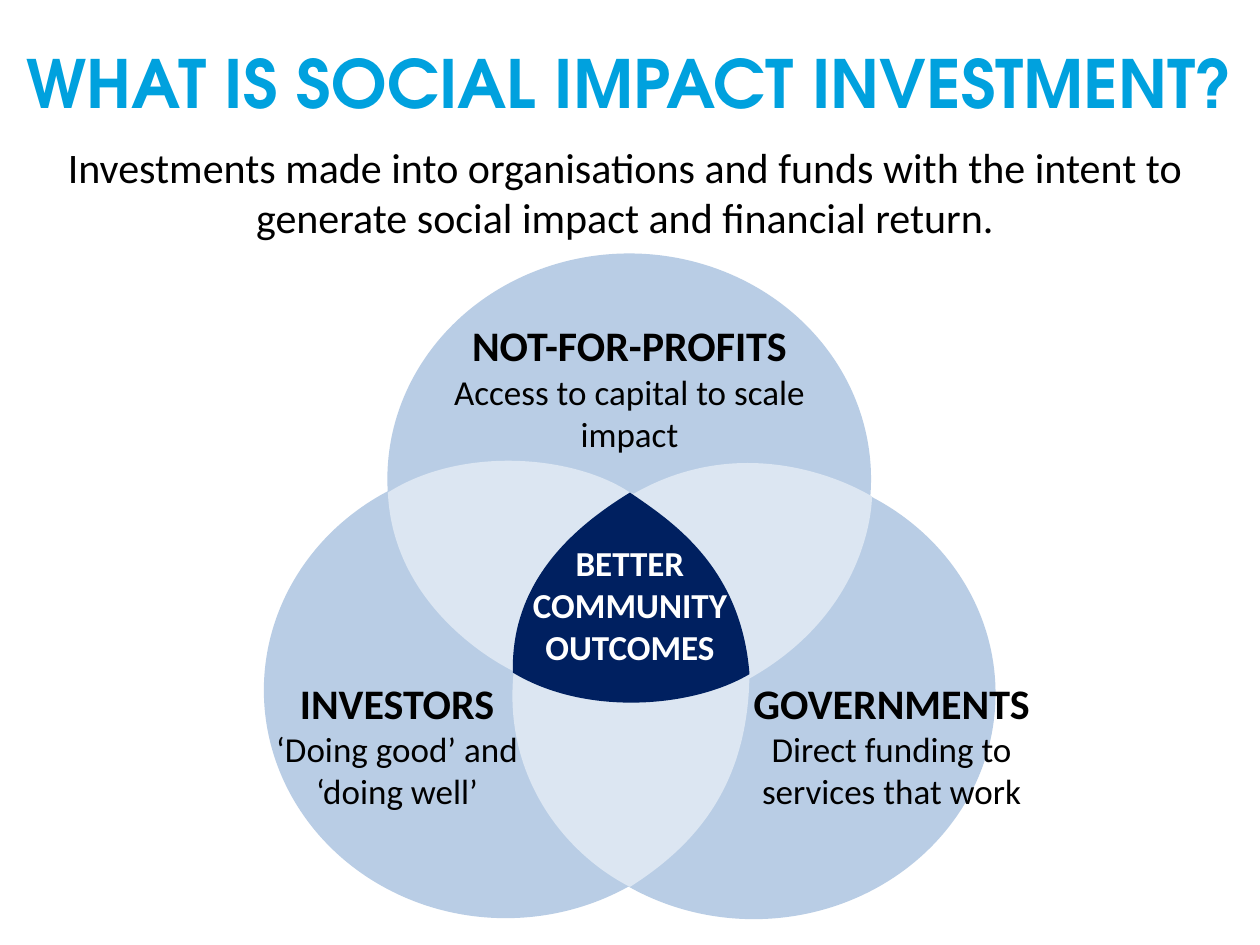
"""Build the social impact investment slide with its three-circle Venn diagram."""
from lxml.etree import SubElement
from pptx import Presentation
from pptx.dml.color import RGBColor
from pptx.enum.shapes import MSO_SHAPE
from pptx.enum.text import MSO_ANCHOR as ANCHOR, PP_ALIGN as ALIGN
from pptx.oxml.ns import qn
from pptx.util import Cm, Pt

COLOURS = {"title": "00A1DE", "text": "000000", "circle": "B9CDE5",
           "overlap": "DCE6F2", "core": "002060", "light": "FFFFFF"}
FORMATS = {
    "title": {"name": "TeX Gyre Adventor", "size": Pt(38), "bold": True},
    "intro": {"name": "Calibri", "size": Pt(24), "bold": False},
    "heading": {"name": "Calibri", "size": Pt(24), "bold": True},
    "detail": {"name": "Calibri", "size": Pt(20), "bold": False},
    "core": {"name": "Calibri", "size": Pt(20), "bold": True},
}


def write_text(shape, lines, colour, **frame_format):
    frame = shape.text_frame
    frame.word_wrap = True
    for key, value in frame_format.items():
        setattr(frame, key, value)
    for index, (text, style) in enumerate(lines):
        para = frame.add_paragraph() if index else frame.paragraphs[0]
        para.alignment = ALIGN.CENTER
        span = para.add_run()
        span.text = text
        span.font.color.rgb = RGBColor.from_string(COLOURS[colour])
        for key, value in FORMATS[style].items():
            setattr(span.font, key, value)


def add_curved_area(shapes, outline):
    builder = shapes.build_freeform(*map(Cm, outline[0]))
    builder.add_line_segments([tuple(map(Cm, point)) for point in outline[1:]], close=True)
    shape = builder.convert_to_shape()
    lines = list(shape.element.iter(qn("a:lnTo")))
    for first in range(0, len(lines), 3):
        curve = SubElement(lines[first].getparent(), qn("a:cubicBezTo"))
        lines[first].addprevious(curve)
        for line in lines[first:first + 3]:
            curve.append(line[0])
            line.getparent().remove(line)
    return shape


deck = Presentation()
deck.slide_width, deck.slide_height = Cm(25.4), Cm(19.05)
page = deck.slides.add_slide(deck.slide_layouts[6])

title = page.shapes.add_textbox(Cm(0), Cm(0.75), Cm(25.4), Cm(1.8))
write_text(title, [("WHAT IS SOCIAL IMPACT INVESTMENT?", "title")], "title",
           vertical_anchor=ANCHOR.MIDDLE, margin_left=0, margin_right=0)

intro = page.shapes.add_textbox(Cm(0.9), Cm(2.72), Cm(23.4), Cm(2.31))
write_text(intro, [("Investments made into organisations and funds with the intent to "
                    "generate social impact and financial return.", "intro")], "text")

venn = [
    ("circle", (7.81, 5.11, 9.75, 9.09)),
    ("circle", (5.32, 9.32, 9.75, 9.19)),
    ("overlap", [(12.67, 9.91),
                 (13.94, 10.44), (15.44, 12.98), (15.04, 13.56),
                 (14.66, 14.17), (11.53, 14.12), (10.31, 13.51),
                 (9.91, 13.31), (7.92, 12.17), (7.82, 9.93),
                 (9.3, 8.99), (11.53, 9.17), (12.67, 9.91)]),
    ("circle", (10.32, 9.44, 9.75, 9.09)),
    ("overlap", [(12.7, 17.88),
                 (13.94, 17.09), (15.11, 15.9), (15.11, 13.51),
                 (14.12, 14.05), (12.4, 14.43), (10.36, 13.51),
                 (10.13, 15.54), (11.28, 17.15), (12.7, 17.88)]),
    ("overlap", [(15.09, 13.69),
                 (17.6, 12.29), (17.58, 10.01), (17.58, 10.01),
                 (17.58, 10.01), (15.24, 8.51), (12.73, 9.98),
                 (13.54, 10.64), (14.78, 11.3), (15.09, 13.69)]),
    ("core", [(12.7, 9.93),
              (13.51, 10.49), (14.94, 11.4), (15.11, 13.59),
              (13.97, 14.27), (11.81, 14.45), (10.34, 13.56),
              (10.29, 11.63), (11.71, 10.54), (12.7, 9.93)]),
]
diagram = page.shapes.add_group_shape()
for colour, outline in venn:
    if colour == "circle":
        area = diagram.shapes.add_shape(MSO_SHAPE.OVAL, *map(Cm, outline))
    else:
        area = add_curved_area(diagram.shapes, outline)
    area.shadow.inherit = False
    area.fill.solid()
    area.fill.fore_color.rgb = RGBColor.from_string(COLOURS[colour])
    area.line.fill.background()
    if colour == "core":
        write_text(area, [("BETTER COMMUNITY OUTCOMES", "core")], "light",
                   vertical_anchor=ANCHOR.MIDDLE)

labels = [
    (14.9, 13.53, 6.15, "GOVERNMENTS", "Direct funding to services that work"),
    (5.3, 13.53, 5.41, "INVESTORS", "‘Doing good’ and ‘doing well’"),
    (8.08, 6.32, 9.22, "NOT-FOR-PROFITS", "Access to capital to scale impact"),
]
for left, top, width, heading, detail in labels:
    box = page.shapes.add_textbox(Cm(left), Cm(top), Cm(width), Cm(3))
    write_text(box, [(heading, "heading"), (detail, "detail")], "text")

deck.save("out.pptx")
